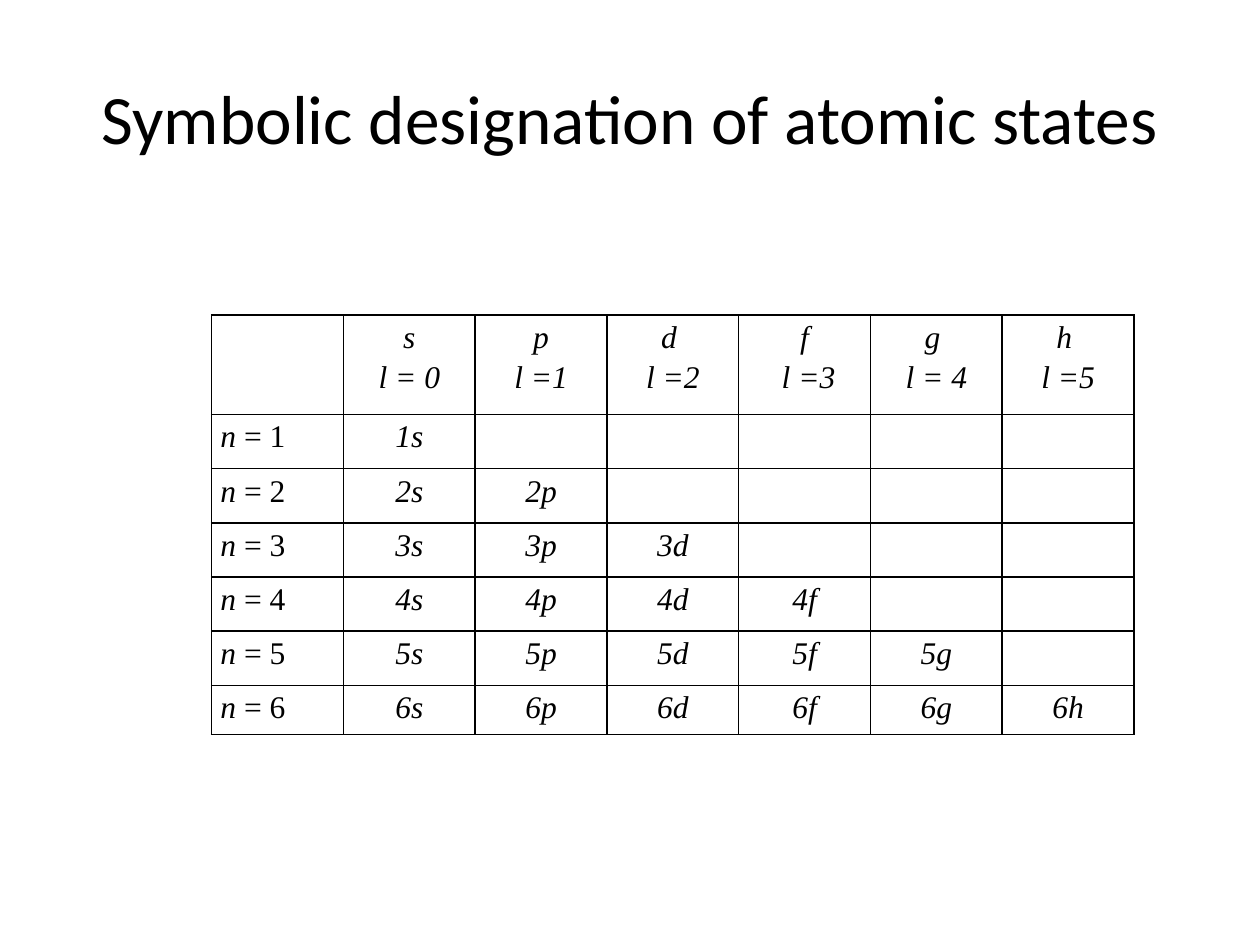
from lxml.etree import SubElement
from pptx import Presentation
from pptx.dml.color import RGBColor
from pptx.enum.text import MSO_ANCHOR, PP_ALIGN
from pptx.oxml.ns import qn
from pptx.util import Inches, Pt

BLACK = RGBColor(0x00, 0x00, 0x00)
HEADERS = [("s", "l = 0"), ("p", "l =1"), ("d ", "l =2"),
           ("f", " l =3"), ("g ", "l = 4"), ("h ", "l =5")]
SHELLS = len(HEADERS)
HEADER_HEIGHT, ROW_HEIGHT, LAST_HEIGHT = 0.79, 0.43, 0.39


def write_line(paragraph, pieces, alignment):
    """Fill a paragraph with (text, italic) pieces."""
    paragraph.alignment = alignment
    paragraph.line_spacing = 1.15
    for text, italic in pieces:
        run = paragraph.add_run()
        run.text = text
        run.font.name = "Times New Roman"
        run.font.size = Pt(18)
        run.font.italic = italic
        run.font.color.rgb = BLACK


def add_borders(cell):
    properties = cell._tc.get_or_add_tcPr()
    for position, side in enumerate(("a:lnL", "a:lnR", "a:lnT", "a:lnB")):
        line = SubElement(properties, qn(side), w=str(Pt(1)))
        fill = SubElement(line, qn("a:solidFill"))
        SubElement(fill, qn("a:srgbClr"), val=str(BLACK))
        properties.insert(position, line)


presentation = Presentation()
presentation.slide_width = Inches(10)
presentation.slide_height = Inches(7.5)
slide = presentation.slides.add_slide(presentation.slide_layouts[6])

# Title
title = slide.shapes.add_textbox(Inches(0.5), Inches(0.3), Inches(9), Inches(1.25))
title_frame = title.text_frame
title_frame.word_wrap = True
title_frame.vertical_anchor = MSO_ANCHOR.MIDDLE
title_frame.text = "Symbolic designation of atomic states"
title_paragraph = title_frame.paragraphs[0]
title_paragraph.alignment = PP_ALIGN.CENTER
title_font = title_paragraph.runs[0].font
title_font.name = "Calibri"
title_font.size = Pt(39.6)
title_font.color.rgb = BLACK

# Table grid
heights = [HEADER_HEIGHT] + [ROW_HEIGHT] * (SHELLS - 1) + [LAST_HEIGHT]
table = slide.shapes.add_table(SHELLS + 1, SHELLS + 1, Inches(1.68), Inches(2.5),
                               Inches(7.32), Inches(sum(heights))).table
table.first_row = False
table.horz_banding = False
for row, height in zip(table.rows, heights):
    row.height = Inches(height)
for cell in table.iter_cells():
    cell.fill.background()
    cell.margin_left = cell.margin_right = Inches(0.07)
    cell.margin_top = cell.margin_bottom = 0
    add_borders(cell)

# Header row: orbital letter above its quantum number
for column, (letter, number) in enumerate(HEADERS, start=1):
    frame = table.cell(0, column).text_frame
    write_line(frame.paragraphs[0], [(letter, True)], PP_ALIGN.CENTER)
    write_line(frame.add_paragraph(), [(number, True)], PP_ALIGN.CENTER)

# Shell n holds the states with l below n
for n in range(1, SHELLS + 1):
    write_line(table.cell(n, 0).text_frame.paragraphs[0],
               [("n ", True), (f"= {n}", False)], PP_ALIGN.LEFT)
    for column, (letter, _) in enumerate(HEADERS[:n], start=1):
        write_line(table.cell(n, column).text_frame.paragraphs[0],
                   [(f"{n}{letter.strip()}", True)], PP_ALIGN.CENTER)

presentation.save("out.pptx")
